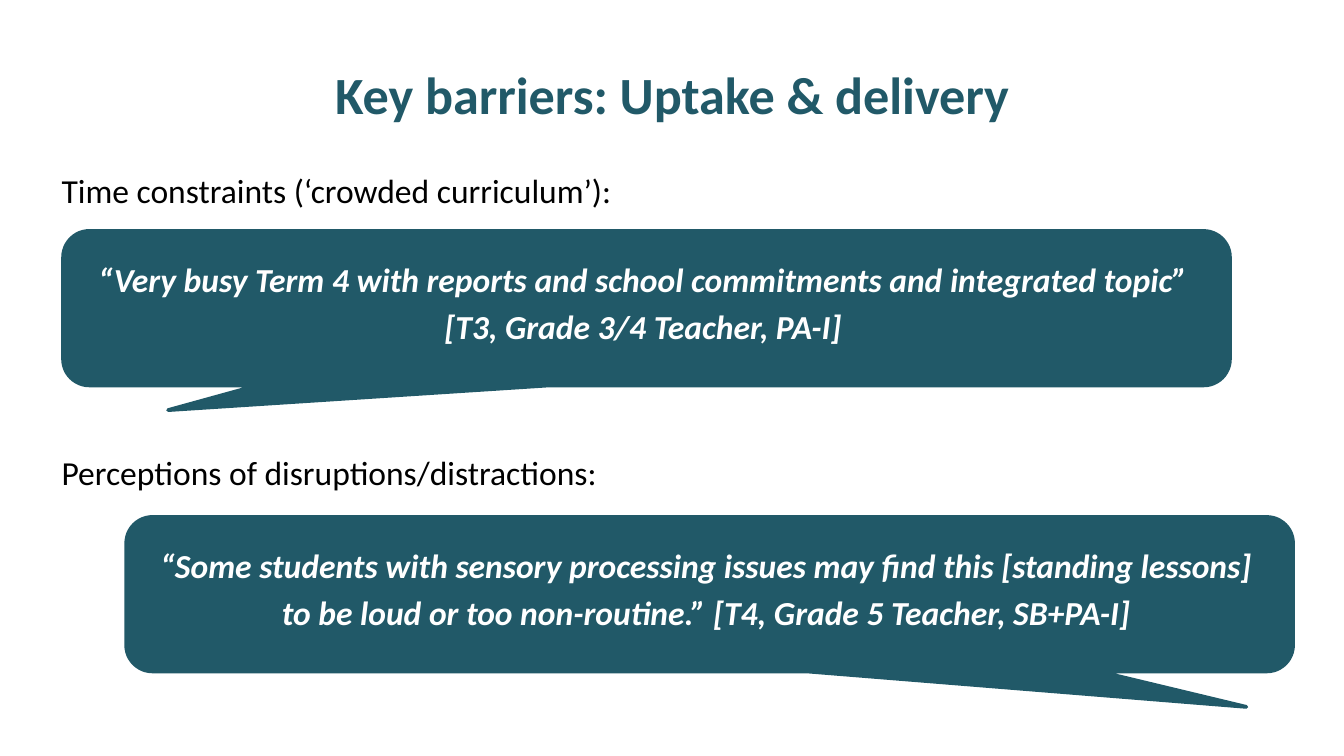
"""Build the slide on key barriers to uptake and delivery."""
from pptx import Presentation
from pptx.dml.color import RGBColor
from pptx.enum.shapes import MSO_SHAPE
from pptx.enum.text import MSO_ANCHOR, PP_ALIGN
from pptx.util import Inches, Pt

CALLOUT = MSO_SHAPE.ROUNDED_RECTANGULAR_CALLOUT
TOP, MIDDLE = MSO_ANCHOR.TOP, MSO_ANCHOR.MIDDLE
LEFT, CENTER = PP_ALIGN.LEFT, PP_ALIGN.CENTER
TEAL, BLACK, WHITE = "215968", "000000", "FFFFFF"


def color(value):
    return RGBColor.from_string(value)


def write(shape, lines, size=18, fill=BLACK, bold=False, italic=False,
          align=LEFT, anchor=TOP):
    frame = shape.text_frame
    frame.word_wrap = True
    frame.vertical_anchor = anchor
    for index, line in enumerate(lines):
        paragraph = frame.add_paragraph() if index else frame.paragraphs[0]
        paragraph.alignment = align
        paragraph.space_before = Pt(3.6 if index else 0)
        run = paragraph.add_run()
        run.text = line
        run.font.name = "Calibri"
        run.font.size = Pt(size)
        run.font.bold = bold
        run.font.italic = italic
        run.font.color.rgb = color(fill)


presentation = Presentation()
presentation.slide_width = Inches(10.01)
presentation.slide_height = Inches(5.63)
slide = presentation.slides.add_slide(presentation.slide_layouts[5])
slide.background.fill.solid()
slide.background.fill.fore_color.rgb = color(WHITE)

title = slide.shapes.title
title.left, title.top = Inches(0.5), Inches(0.23)
title.width, title.height = Inches(9.01), Inches(0.94)
write(title, ["Key barriers: Uptake & delivery"], size=28, fill=TEAL, bold=True,
      align=CENTER, anchor=MIDDLE)

barriers = [
    ("Time constraints (‘crowded curriculum’):", 1.22,
     ["“Very busy Term 4 with reports and school commitments and integrated topic”",
      "[T3, Grade 3/4 Teacher, PA-I]"],
     0.47, 1.72, (-0.41, 0.66, 0.17)),
    ("Perceptions of disruptions/distractions:", 3.32,
     ["“Some students with sensory processing issues may find this [standing lessons]",
      "to be loud or too non-routine.” [T4, Grade 5 Teacher, SB+PA-I]"],
     0.94, 3.85, (0.46, 0.73, 0.17)),
]

for label, label_top, quote, quote_left, quote_top, pointer in barriers:
    label_box = slide.shapes.add_textbox(
        Inches(0.36), Inches(label_top), Inches(9.29), Inches(0.4))
    write(label_box, [label])

    callout = slide.shapes.add_shape(
        CALLOUT, Inches(quote_left), Inches(quote_top), Inches(8.69), Inches(1.15))
    callout.shadow.inherit = False
    for index, value in enumerate(pointer):
        callout.adjustments[index] = value
    callout.fill.solid()
    callout.fill.fore_color.rgb = color(TEAL)
    callout.line.color.rgb = color(TEAL)
    callout.line.width = Pt(2)
    callout.text_frame.margin_top = Inches(0.15)
    callout.text_frame.margin_left = Inches(0.05)
    callout.text_frame.margin_right = Inches(0.1)
    write(callout, quote, fill=WHITE, bold=True, italic=True, align=CENTER)

presentation.save("out.pptx")
